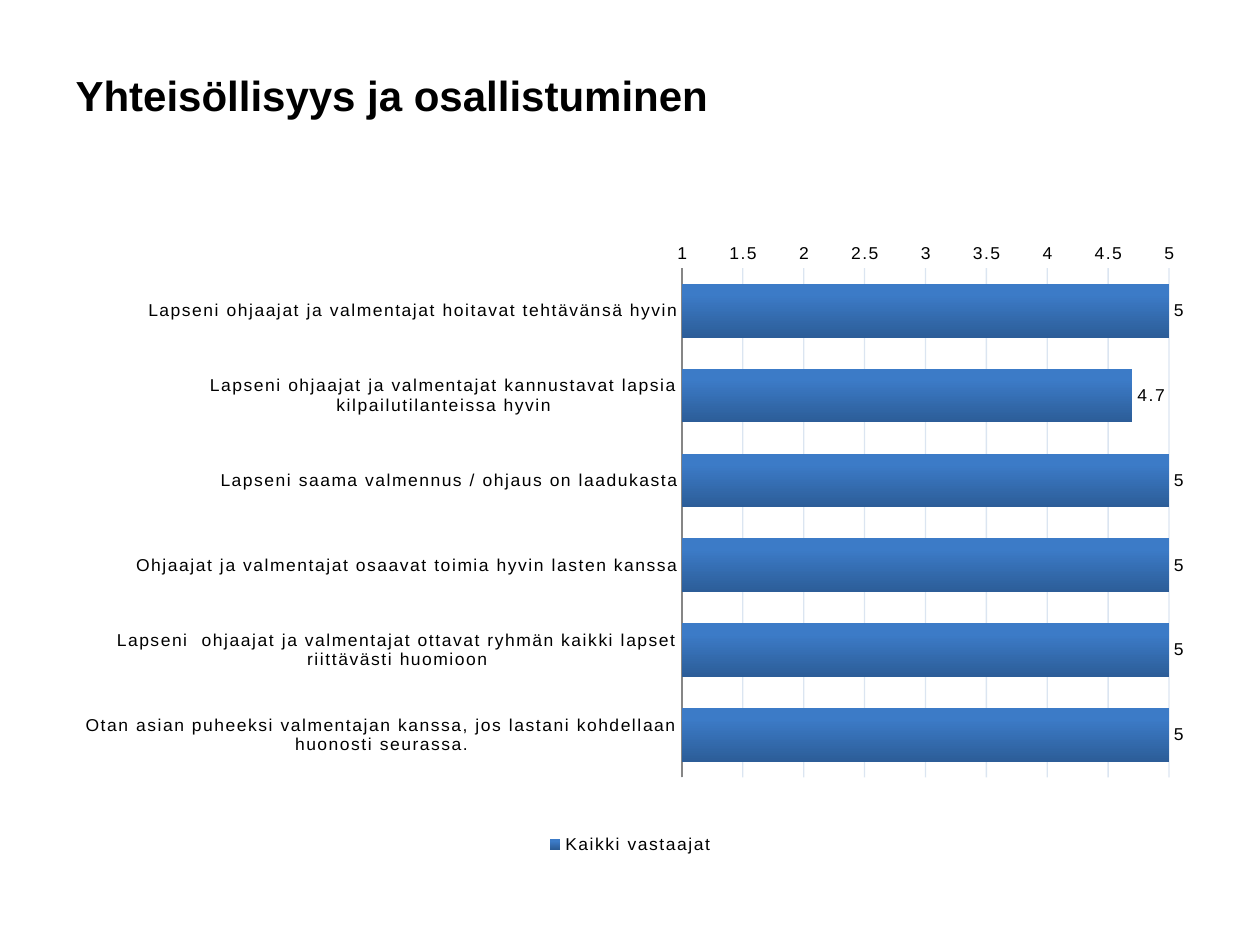
import pptx
import pptx.chart.data
import pptx.dml.color
import pptx.enum.chart
import pptx.enum.text
import pptx.oxml
import pptx.oxml.ns
import pptx.util
from dataclasses import dataclass
from lxml import etree

PX_PER_INCH = 126


def px(length):
    return pptx.util.Emu(round(length * 914400 / PX_PER_INCH))


def rgb(value):
    return pptx.dml.color.RGBColor.from_string(value)


@dataclass(frozen=True)
class Theme:
    font: str = "Arial"
    text: str = "000000"
    grid: str = "4F81BD"
    grid_opacity: int = 20
    axis: str = "868686"
    bar_bottom: str = "2C5D98"
    bar_top: str = "3C7BC7"
    title_size: int = 24
    chart_size: int = 10
    letter_spacing: int = 100  # hundredths of a point


class SlideBuilder:
    def __init__(self, slide, theme):
        self.slide = slide
        self.theme = theme

    def style_font(self, font, size):
        font.name = self.theme.font
        font.size = pptx.util.Pt(size)
        font.color.rgb = rgb(self.theme.text)

    def title(self, text, left, top, width, height):
        heading = self.slide.shapes.title
        heading.left, heading.top = px(left), px(top)
        heading.width, heading.height = px(width), px(height)
        heading.text_frame.vertical_anchor = pptx.enum.text.MSO_ANCHOR.MIDDLE
        paragraph = heading.text_frame.paragraphs[0]
        paragraph.alignment = pptx.enum.text.PP_ALIGN.LEFT
        run = paragraph.add_run()
        run.text = text
        self.style_font(run.font, self.theme.title_size)
        run.font.bold = True

    def bar_chart(self, series_name, ratings, left, top, width, height, plot_box):
        data = pptx.chart.data.CategoryChartData()
        data.categories = [statement for statement, _ in ratings]
        data.add_series(series_name, [rating for _, rating in ratings])
        chart = self.slide.shapes.add_chart(
            pptx.enum.chart.XL_CHART_TYPE.BAR_CLUSTERED,
            px(left), px(top), px(width), px(height), data).chart
        chart.has_title = False
        self.style_font(chart.font, self.theme.chart_size)

        # Legend
        chart.has_legend = True
        chart.legend.position = pptx.enum.chart.XL_LEGEND_POSITION.BOTTOM
        chart.legend.include_in_layout = False
        self.style_font(chart.legend.font, self.theme.chart_size)

        self.statement_axis(chart.category_axis)
        self.rating_axis(chart.value_axis)
        self.bars(chart.plots[0])
        self.place_plot(chart, [
            (plot_box[0] - left) / width, (plot_box[1] - top) / height,
            plot_box[2] / width, plot_box[3] / height])
        for properties in chart._chartSpace.xpath(".//a:defRPr"):
            properties.set("spc", str(self.theme.letter_spacing))

    def plain_axis(self, axis):
        axis.major_tick_mark = pptx.enum.chart.XL_TICK_MARK.NONE
        axis.minor_tick_mark = pptx.enum.chart.XL_TICK_MARK.NONE
        self.style_font(axis.tick_labels.font, self.theme.chart_size)

    def statement_axis(self, axis):
        self.plain_axis(axis)
        axis.reverse_order = True
        axis.crosses = pptx.enum.chart.XL_AXIS_CROSSES.MAXIMUM
        axis.format.line.color.rgb = rgb(self.theme.axis)
        axis.format.line.width = pptx.util.Pt(1)

    def rating_axis(self, axis):
        self.plain_axis(axis)
        axis.minimum_scale, axis.maximum_scale, axis.major_unit = 1, 5, 0.5
        axis.tick_labels.number_format = "General"
        axis.tick_labels.number_format_is_linked = False
        axis.format.line.fill.background()
        axis.has_major_gridlines = True
        grid = axis.major_gridlines.format.line
        grid.color.rgb = rgb(self.theme.grid)
        grid.width = pptx.util.Pt(0.75)
        color = axis.major_gridlines._xAx.xpath("c:majorGridlines//a:srgbClr")[0]
        etree.SubElement(color, pptx.oxml.ns.qn("a:alpha"),
                         val=str(self.theme.grid_opacity * 1000))

    def bars(self, plot):
        plot.gap_width = 58
        plot.vary_by_categories = False
        fill = plot.series[0].format.fill
        fill.gradient()
        fill.gradient_angle = 90
        colors = (self.theme.bar_bottom, self.theme.bar_top)
        for stop, color, position in zip(fill.gradient_stops, colors, (0, 0.8)):
            stop.color.rgb = rgb(color)
            stop.position = position
        labels = plot.series[0].data_labels
        labels.show_value = True
        labels.position = pptx.enum.chart.XL_LABEL_POSITION.OUTSIDE_END
        self.style_font(labels.font, self.theme.chart_size)

    def place_plot(self, chart, fractions):
        """Fix the inner plot area, given as fractions of the chart."""
        qn = pptx.oxml.ns.qn
        plot_area = chart._chartSpace.xpath("c:chart/c:plotArea")[0]
        for old_layout in plot_area.xpath("c:layout"):
            plot_area.remove(old_layout)
        layout = etree.Element(qn("c:layout"))
        manual = etree.SubElement(layout, qn("c:manualLayout"))
        settings = [("layoutTarget", "inner"), ("xMode", "edge"), ("yMode", "edge")]
        settings += [(key, f"{part:.4f}") for key, part in zip("xywh", fractions)]
        for key, value in settings:
            etree.SubElement(manual, qn(f"c:{key}"), val=value)
        plot_area.insert(0, layout)


RATINGS = [
    ("Lapseni ohjaajat ja valmentajat hoitavat tehtävänsä hyvin", 5),
    ("Lapseni ohjaajat ja valmentajat kannustavat lapsia kilpailutilanteissa hyvin", 4.7),
    ("Lapseni saama valmennus / ohjaus on laadukasta", 5),
    ("Ohjaajat ja valmentajat osaavat toimia hyvin lasten kanssa", 5),
    ("Lapseni  ohjaajat ja valmentajat ottavat ryhmän kaikki lapset riittävästi huomioon", 5),
    ("Otan asian puheeksi valmentajan kanssa, jos lastani kohdellaan huonosti seurassa.", 5),
]


def main():
    presentation = pptx.Presentation()
    presentation.slide_width, presentation.slide_height = px(1260), px(945)
    slide = presentation.slides.add_slide(presentation.slide_layouts[5])
    builder = SlideBuilder(slide, Theme())

    # Heading
    builder.title("Yhteisöllisyys ja osallistuminen", 63, 45, 1134, 100)

    # Ratings per statement
    builder.bar_chart("Kaikki vastaajat", RATINGS, 63, 244, 1134, 615,
                      plot_box=(682, 257, 487, 519))

    presentation.save("out.pptx")


if __name__ == "__main__":
    main()
